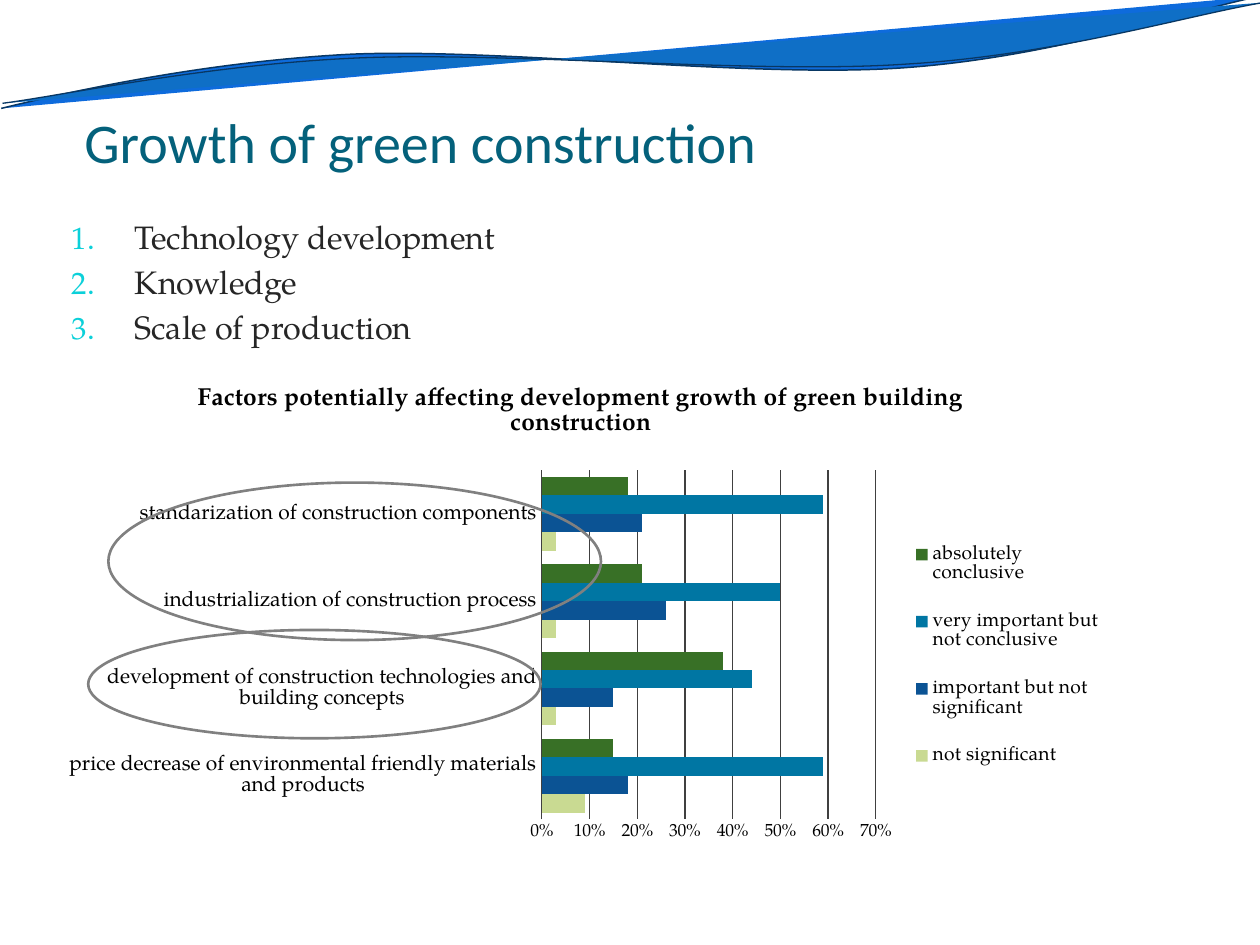
from lxml import etree
from pptx import Presentation
from pptx.chart.data import CategoryChartData
from pptx.dml.color import RGBColor
from pptx.enum.chart import XL_CHART_TYPE as CHART, XL_LEGEND_POSITION as LEGEND, XL_TICK_MARK as TICK
from pptx.enum.shapes import MSO_SHAPE as SHAPE
from pptx.enum.text import MSO_ANCHOR as ANCHOR
from pptx.oxml import parse_xml
from pptx.oxml.ns import nsdecls, qn
from pptx.util import Inches, Pt

COLORS = {
    "title": "04617B", "body": "262626", "number": "0BD0D9", "black": "000000",
    "wave_back": "0E6BDC", "wave_front": "0F6FC6", "wave_line": "083763",
    "ring": "808080", "grid": "404040", "not": "C9DA92",
    "important": "0B5394", "very": "0076A3", "absolute": "387026",
}
SERIF, SANS = "TeX Gyre Pagella", "Calibri"
WAVES = [
    ("wave_back", 0.85, [(0.01, 0.86), (0.5, 0.74), (1.6, 0.49), (2.79, 0.43), (3.98, 0.38),
                         (5.94, 0.62), (7.14, 0.54), (8.35, 0.46), (9.41, 0.09), (10, -0.03)]),
    ("wave_front", 0.75, [(0.02, 0.82), (0.49, 0.76), (1.66, 0.51), (2.85, 0.46), (4.05, 0.41),
                          (5.99, 0.59), (7.18, 0.51), (8.38, 0.44), (9.43, 0.12), (10.03, 0.02)]),
]
TOPICS = ["Technology development", "Knowledge", "Scale of production"]
CHART_TITLE = "Factors potentially affecting development growth of green building construction"
FACTORS = [
    "price decrease of environmental friendly materials and products",
    "development of construction technologies and building concepts",
    "industrialization of construction process",
    "standarization of construction components",
]
SERIES = [
    ("not significant", "not", (0.09, 0.03, 0.03, 0.03)),
    ("important but not significant", "important", (0.18, 0.15, 0.26, 0.21)),
    ("very important but not conclusive", "very", (0.59, 0.44, 0.5, 0.59)),
    ("absolutely conclusive", "absolute", (0.15, 0.38, 0.21, 0.18)),
]
RINGS = [(0.7, 5, 3.59, 0.86), (0.86, 3.83, 3.91, 1.25)]


def rgb(name):
    """Return the named colour."""
    return RGBColor.from_string(COLORS[name])


def style_font(font, name, size, color, bold=False):
    """Set face, size, colour and weight of a font."""
    font.name, font.size, font.bold = name, Pt(size), bold
    font.color.rgb = rgb(color)


def add_wave(slide, color, width, points):
    """Draw a filled open curve through cubic Bezier control points."""
    builder = slide.shapes.build_freeform(*map(Inches, points[0]))
    builder.add_line_segments([tuple(map(Inches, pt)) for pt in points[1:]], close=False)
    s = builder.convert_to_shape()
    s.shadow.inherit = False
    s.fill.solid()
    s.fill.fore_color.rgb = rgb(color)
    s.line.color.rgb = rgb("wave_line")
    s.line.width = Pt(width)
    path = next(s._element.iter(qn("a:path")))
    lines = path.findall(qn("a:lnTo"))
    for i in range(0, len(lines), 3):
        curve = etree.SubElement(path, qn("a:cubicBezTo"))
        for line in lines[i:i + 3]:
            curve.append(line[0])
            path.remove(line)


def add_text_frame(slide, box, insets, anchor):
    """Add a wrapping text box and return its text frame."""
    tf = slide.shapes.add_textbox(*map(Inches, box)).text_frame
    tf.word_wrap, tf.vertical_anchor = True, anchor
    tf.margin_left, tf.margin_top, tf.margin_right, tf.margin_bottom = map(Inches, insets)
    return tf


def add_title(slide, text):
    """Add the slide title."""
    tf = add_text_frame(slide, (0.67, 0.52, 8.43, 0.87), (0, 0.05, 0, 0), ANCHOR.BOTTOM)
    r = tf.paragraphs[0].add_run()
    r.text = text
    style_font(r.font, SANS, 32, "title")


def add_numbered_list(slide, items):
    """Add the automatically numbered topics."""
    tf = add_text_frame(slide, (0.47, 1.62, 8.59, 1.19), (0.1, 0.1, 0.01, 0.1), ANCHOR.TOP)
    for i, item in enumerate(items):
        p = tf.paragraphs[0] if i == 0 else tf.add_paragraph()
        if i:
            p.space_before = Pt(3.7)
        pPr = p._p.get_or_add_pPr()
        pPr.set("marL", str(Inches(0.5)))
        pPr.set("indent", str(-Inches(0.5)))
        color = etree.SubElement(pPr, qn("a:buClr"))
        etree.SubElement(color, qn("a:srgbClr"), val=COLORS["number"])
        etree.SubElement(pPr, qn("a:buSzPct"), val="95000")
        etree.SubElement(pPr, qn("a:buFont"), typeface=SERIF)
        etree.SubElement(pPr, qn("a:buAutoNum"), type="arabicPeriod")
        r = p.add_run()
        r.text = item
        style_font(r.font, SERIF, 18.5, "body")


def manual_layout(x, y, w, h, inner=False):
    """Return a chart layout element given in fractions of the chart."""
    target = '<c:layoutTarget val="inner"/>' if inner else ""
    return parse_xml(
        f'<c:layout {nsdecls("c")}><c:manualLayout>{target}'
        '<c:xMode val="edge"/><c:yMode val="edge"/>'
        f'<c:x val="{x}"/><c:y val="{y}"/><c:w val="{w}"/><c:h val="{h}"/>'
        '</c:manualLayout></c:layout>')


def set_layout(element, layout, index):
    """Put a layout in place of any present one."""
    for old in element.findall(qn("c:layout")):
        element.remove(old)
    element.insert(index, layout)


def add_factor_chart(slide):
    """Add the clustered bar chart of growth factors."""
    data = CategoryChartData(number_format="0%")
    data.categories = FACTORS
    for name, _, values in SERIES:
        data.add_series(name, values)
    box = map(Inches, (0.43, 2.88, 8.36, 4.22))
    chart = slide.shapes.add_chart(CHART.BAR_CLUSTERED, *box, data).chart
    style_font(chart.font, SERIF, 10, "black")
    chart.has_title = True
    r = chart.chart_title.text_frame.paragraphs[0].add_run()
    r.text = CHART_TITLE
    style_font(r.font, SERIF, 14, "black", bold=True)
    chart.chart_title.include_in_layout = False

    plot = chart.plots[0]
    plot.gap_width, plot.overlap, plot.vary_by_categories = 75, 0, False
    for series, (_, color, _) in zip(plot.series, SERIES):
        series.format.fill.solid()
        series.format.fill.fore_color.rgb = rgb(color)

    cat, val = chart.category_axis, chart.value_axis
    for axis, size in ((cat, 12), (val, 10)):
        axis.major_tick_mark = axis.minor_tick_mark = TICK.NONE
        style_font(axis.tick_labels.font, SERIF, size, "black")
    val.minimum_scale, val.maximum_scale, val.major_unit = 0, 0.7, 0.1
    val.tick_labels.number_format = "0%"
    val.tick_labels.number_format_is_linked = False
    val.format.line.fill.background()
    val.has_major_gridlines = True
    for line in (cat.format.line, val.major_gridlines.format.line):
        line.color.rgb = rgb("grid")
        line.width = Pt(0.75)

    chart.has_legend = True
    legend = chart.legend
    legend.position, legend.include_in_layout = LEGEND.BOTTOM, False
    style_font(legend.font, SERIF, 11, "black")
    set_layout(legend._element, manual_layout(0.81, 0.29, 0.19, 0.52), 1)
    plot_area = next(chart._chartSpace.iter(qn("c:plotArea")))
    set_layout(plot_area, manual_layout(0.463, 0.202, 0.317, 0.657, inner=True), 0)


def add_ring(slide, box):
    """Add an unfilled ellipse around chart labels."""
    s = slide.shapes.add_shape(SHAPE.OVAL, *map(Inches, box))
    s.shadow.inherit = False
    s.fill.background()
    s.line.color.rgb = rgb("ring")
    s.line.width = Pt(1.5)


def main():
    """Build and save the slide."""
    prs = Presentation()
    prs.slide_width, prs.slide_height = Inches(10), Inches(7.5)
    slide = prs.slides.add_slide(prs.slide_layouts[6])
    for wave in WAVES:
        add_wave(slide, *wave)
    add_title(slide, "Growth of green construction")
    add_factor_chart(slide)
    add_numbered_list(slide, TOPICS)
    for box in RINGS:
        add_ring(slide, box)
    prs.save("out.pptx")


if __name__ == "__main__":
    main()
